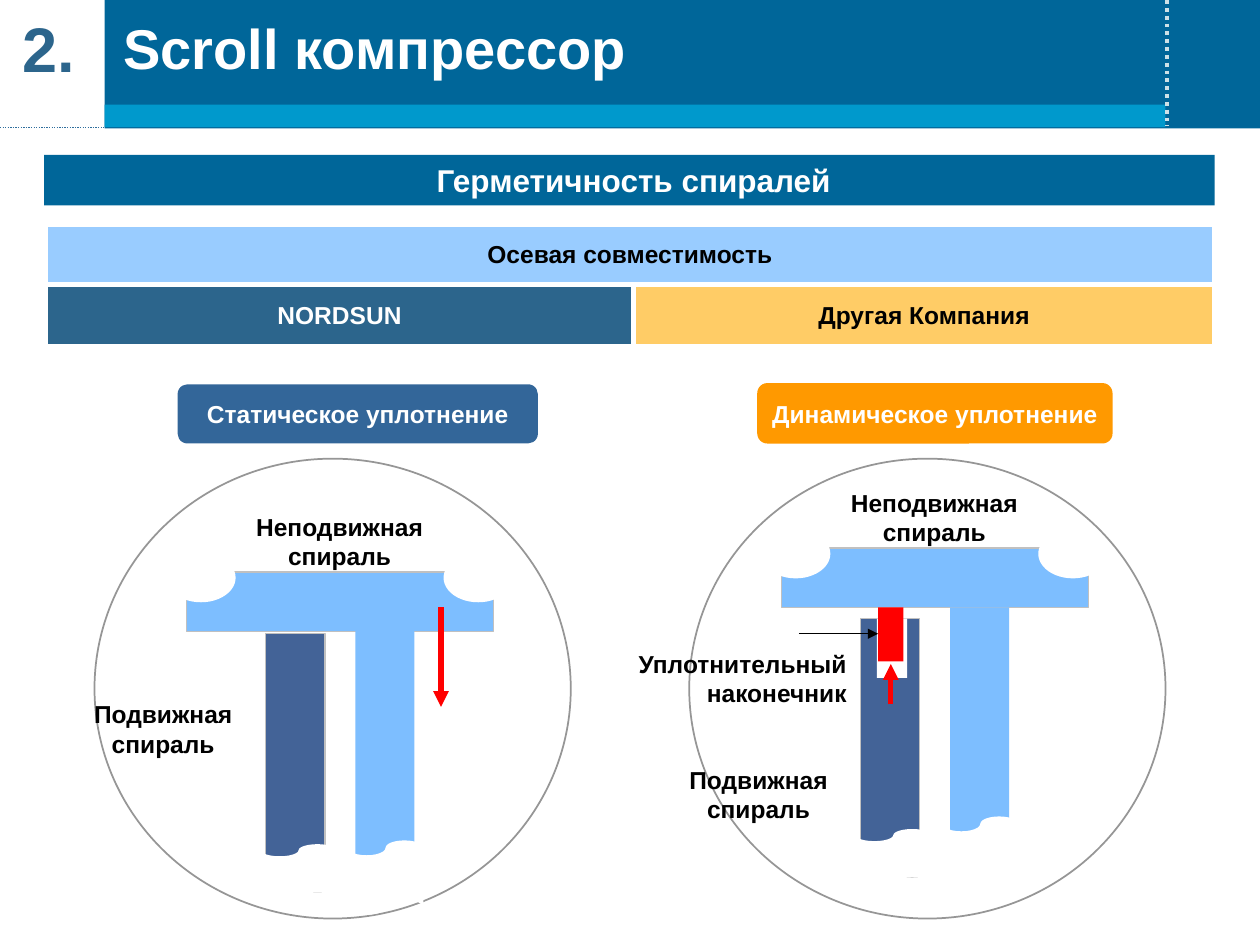
from dataclasses import dataclass
from lxml import etree
from pptx import Presentation
from pptx.dml.color import RGBColor
from pptx.enum.dml import MSO_LINE
from pptx.enum.shapes import MSO_CONNECTOR as Connector, MSO_SHAPE as Shape
from pptx.enum.text import MSO_ANCHOR as Anchor, PP_ALIGN as Align
from pptx.oxml.ns import qn
from pptx.util import Inches, Pt


@dataclass(frozen=True)
class Theme:
    font: str = "Arial"
    body: int = 14
    heading: int = 18
    title: int = 32
    number: int = 36
    white: str = "FFFFFF"
    black: str = "000000"
    header: str = "006699"
    stripe: str = "0099CC"
    rule: str = "2F6E9D"
    header_dots: str = "CDE1E7"
    own: str = "2C658C"
    own_badge: str = "336699"
    other: str = "FFCC66"
    other_badge: str = "FF9900"
    shared: str = "99CCFF"
    fixed: str = "7DBEFF"
    orbiting: str = "436397"
    edge: str = "C0C0C0"
    circle: str = "969696"
    accent: str = "FF0000"


class SlideBuilder:
    def __init__(self, slide, theme):
        self.slide = slide
        self.theme = theme

    def set_text(self, frame, text, color, size=None, align=Align.CENTER,
                 insets=(0, 0, 0, 0), wrap=True, shadow=False):
        frame.word_wrap = wrap
        (frame.margin_left, frame.margin_top,
         frame.margin_right, frame.margin_bottom) = map(Inches, insets)
        paragraph = frame.paragraphs[0]
        run = paragraph.add_run()
        run.text = text
        paragraph.alignment = align
        font = paragraph.font
        font.name, font.size, font.bold = self.theme.font, Pt(size or self.theme.body), True
        font.color.rgb = RGBColor.from_string(color)
        if shadow:
            effects = etree.SubElement(run._r.get_or_add_rPr(), qn("a:effectLst"))
            outer = etree.SubElement(effects, qn("a:outerShdw"),
                                     dist="38100", dir="2700000", algn="tl")
            etree.SubElement(outer, qn("a:srgbClr"), val=self.theme.black)
        return paragraph

    def shape(self, kind, left, top, width, height, fill=None, line=None, weight=0.75):
        shape = self.slide.shapes.add_shape(kind, *map(Inches, (left, top, width, height)))
        shape.shadow.inherit = False
        if fill:
            shape.fill.solid()
            shape.fill.fore_color.rgb = RGBColor.from_string(fill)
        else:
            shape.fill.background()
        if line:
            shape.line.color.rgb = RGBColor.from_string(line)
            shape.line.width = Pt(weight)
        else:
            shape.line.fill.background()
        return shape

    def line(self, x1, y1, x2, y2, color, weight=0.75, dotted=False, arrow=False):
        connector = self.slide.shapes.add_connector(
            Connector.STRAIGHT, *map(Inches, (x1, y1, x2, y2)))
        connector.line.color.rgb = RGBColor.from_string(color)
        connector.line.width = Pt(weight)
        if dotted:
            connector.line.dash_style = MSO_LINE.ROUND_DOT
        if arrow:
            etree.SubElement(connector.line._get_or_add_ln(), qn("a:tailEnd"), type="triangle")
        etree.SubElement(connector._element.spPr, qn("a:effectLst"))

    def text(self, left, top, width, height, text, color=None, **style):
        box = self.slide.shapes.add_textbox(*map(Inches, (left, top, width, height)))
        self.set_text(box.text_frame, text, color or self.theme.black, **style)

    def badge(self, left, top, width, height, text, fill):
        shape = self.shape(Shape.ROUNDED_RECTANGLE, left, top, width, height, fill)
        shape.text_frame.vertical_anchor = Anchor.MIDDLE
        self.set_text(shape.text_frame, text, self.theme.white, wrap=False)

    def cell(self, cell, text, fill, color):
        cell.fill.solid()
        cell.fill.fore_color.rgb = RGBColor.from_string(fill)
        cell.vertical_anchor = Anchor.MIDDLE
        self.set_text(cell.text_frame, text, color).space_before = Pt(3)

    def borders(self, cell, color, weight):
        properties = cell._tc.get_or_add_tcPr()
        for index, side in enumerate(("lnL", "lnR", "lnT", "lnB")):
            border = etree.Element(qn(f"a:{side}"), w=str(Pt(weight)))
            solid = etree.SubElement(border, qn("a:solidFill"))
            etree.SubElement(solid, qn("a:srgbClr"), val=color)
            properties.insert(index, border)

    def scrolls(self, left, top, orbit_gap):
        """Circle with the fixed scroll at (left, top) and the orbiting scroll below it."""
        theme = self.theme
        orbit_top = top + orbit_gap
        self.shape(Shape.OVAL, left - 0.73, 3.64, 3.78, 3.65, line=theme.circle, weight=1)
        # Orbiting scroll with its torn end
        self.shape(Shape.RECTANGLE, left + 0.63, orbit_top, 0.47, 2.05,
                   theme.orbiting, theme.edge)
        self.shape(Shape.FLOWCHART_PUNCHED_TAPE, left + 0.59, orbit_top + 1.67, 0.6, 0.48,
                   theme.white)
        # Fixed scroll: plate, leg, torn end and rounded corners
        self.shape(Shape.RECTANGLE, left, top, 2.44, 0.47, theme.fixed, theme.edge)
        self.shape(Shape.RECTANGLE, left + 1.34, top + 0.47, 0.47, 2.05, theme.fixed)
        self.shape(Shape.FLOWCHART_PUNCHED_TAPE, left + 1.28, top + 2.13, 0.6, 0.59, theme.white)
        for offset in (-0.16, 2.04):
            self.shape(Shape.OVAL, left + offset, top - 0.15, 0.55, 0.39, theme.white)
        self.text(left + 0.47, top - 0.48, 1.49, 0.28, "Неподвижная спираль")


def main():
    theme = Theme()
    presentation = Presentation()
    presentation.slide_width, presentation.slide_height = Inches(10), Inches(7.5)
    slide = presentation.slides.add_slide(presentation.slide_layouts[6])
    builder = SlideBuilder(slide, theme)

    # Header
    builder.line(0, 1.01, 10, 1.01, theme.rule, dotted=True)
    builder.shape(Shape.RECTANGLE, 0.83, 0, 9.17, 1.02, theme.header)
    builder.shape(Shape.RECTANGLE, 0.83, 0.83, 8.42, 0.18, theme.stripe)
    builder.line(9.26, 0, 9.26, 1, theme.header_dots, 2.25, dotted=True)
    builder.text(0.08, 0.03, 0.62, 0.7, "2.", theme.own, size=theme.number,
                 align=Align.LEFT, insets=(0.1, 0.05, 0.1, 0.05), wrap=False, shadow=True)
    builder.text(0.94, 0.07, 8, 0.61, "Scroll компрессор", theme.white, size=theme.title,
                 align=Align.LEFT, insets=(0.04,) * 4, shadow=True)

    # Section heading
    heading = builder.shape(Shape.RECTANGLE, 0.35, 1.23, 9.29, 0.4, theme.header)
    builder.set_text(heading.text_frame, "Герметичность спиралей", theme.white,
                     size=theme.heading, insets=(0.09, 0.05, 0.02, 0.05))

    # Comparison table
    table = slide.shapes.add_table(
        2, 2, *map(Inches, (0.36, 1.78, 9.28, 0.97))).table
    for column, width in zip(table.columns, (4.67, 4.61)):
        column.width = Inches(width)
    for row, height in zip(table.rows, (0.48, 0.49)):
        row.height = Inches(height)
    table.cell(0, 0).merge(table.cell(0, 1))
    builder.cell(table.cell(0, 0), "Осевая совместимость", theme.shared, theme.black)
    builder.cell(table.cell(1, 0), "NORDSUN", theme.own, theme.white)
    builder.cell(table.cell(1, 1), "Другая Компания", theme.other, theme.black)
    for cell in table.iter_cells():
        builder.borders(cell, theme.white, 3)

    # Static seal
    builder.badge(1.41, 3.05, 2.86, 0.47, "Статическое уплотнение", theme.own_badge)
    builder.scrolls(1.48, 4.54, 0.49)
    builder.line(3.5, 4.82, 3.5, 5.61, theme.accent, 3, arrow=True)
    builder.text(0.55, 5.55, 1.49, 0.52, "Подвижная спираль")

    # Dynamic seal with the tip in its groove
    builder.badge(6.01, 3.04, 2.82, 0.48, "Динамическое уплотнение", theme.other_badge)
    builder.scrolls(6.2, 4.35, 0.56)
    builder.shape(Shape.RECTANGLE, 6.96, 4.91, 0.24, 0.47, theme.white)
    builder.shape(Shape.RECTANGLE, 6.97, 4.82, 0.2, 0.43, theme.accent)
    builder.line(7.07, 5.59, 7.07, 5.27, theme.accent, 3, arrow=True)
    builder.line(6.34, 5.03, 6.97, 5.03, theme.black, arrow=True)
    builder.text(4.91, 5.15, 1.81, 0.31, "Уплотнительный наконечник", align=Align.RIGHT)
    builder.text(5.16, 6.02, 1.72, 0.57, "Подвижная спираль", insets=(0.1, 0.05, 0.1, 0.05))

    presentation.save("out.pptx")


if __name__ == "__main__":
    main()
